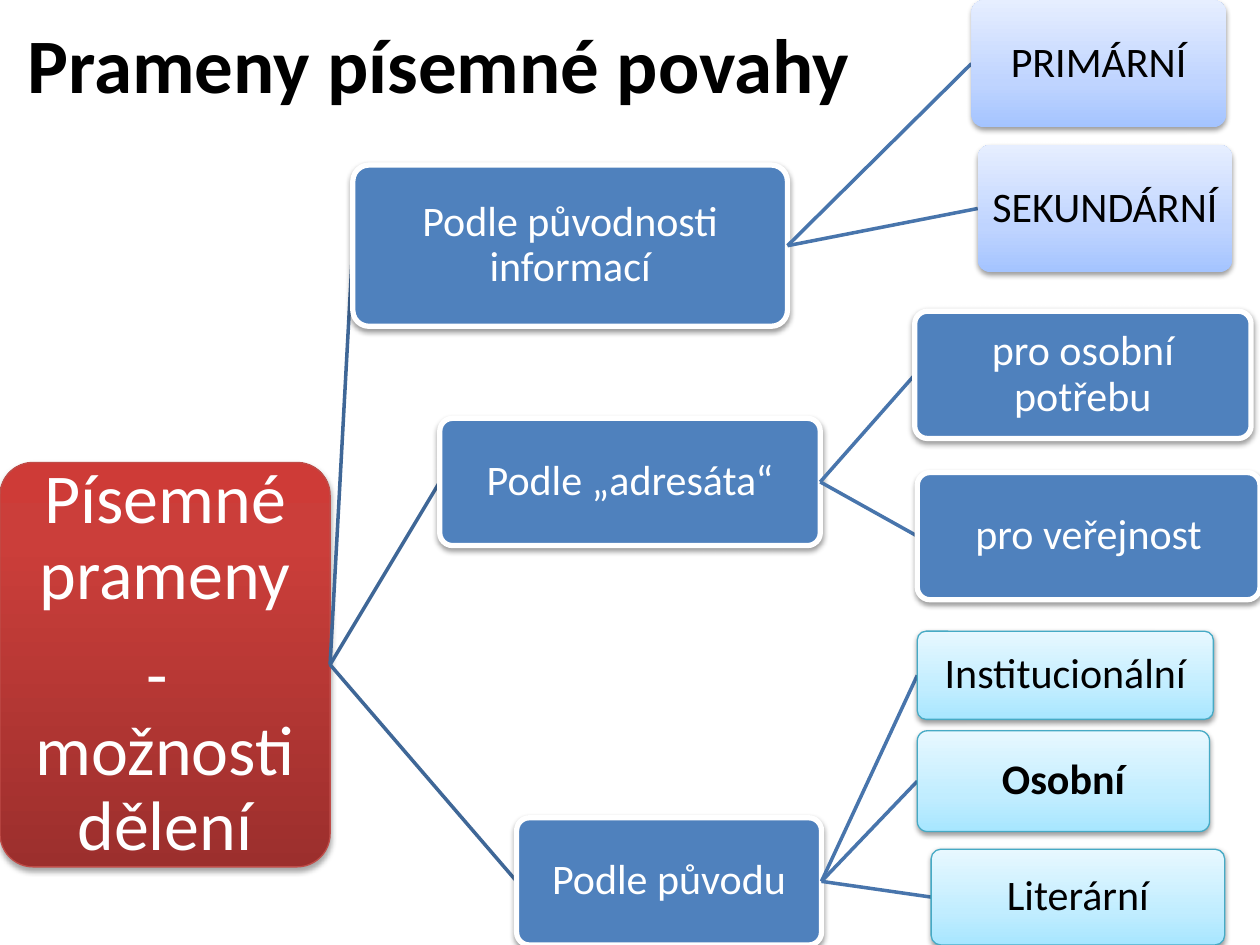
from dataclasses import dataclass

from lxml import etree
from pptx import Presentation
from pptx import util as u
from pptx.dml.color import RGBColor
from pptx.enum import shapes, text
from pptx.oxml.ns import qn

COLUMNS, ROWS = 100, 75
CELL = u.Inches(0.1)


@dataclass(frozen=True)
class Style:
    stops: tuple  # (position in percent, colour), from bottom to top
    ink: str = "000000"
    outline: str = ""
    outline_width: float = 0.75
    size: int = 24
    inset: float = 0.02
    shadow_alpha: int = 38
    shadow_distance: float = 1.6


class Theme:
    font = "Calibri"
    title_size = 44
    title_ink = "000000"
    root_line = "3F6797"
    leaf_line = "4875AC"
    line_width = 2
    corner = 0.1
    line_spacing = 0.9
    space_after = 0.35  # share of the type size
    shadow_blur = 3.1
    root = Style(((0, "9C2F2D"), (80, "CB3E3A"), (100, "CE3B37")), "FFFFFF",
                 "BF4C48", size=40, inset=0.03, shadow_alpha=35, shadow_distance=1.8)
    blue = Style(((0, "4F81BD"),), "FFFFFF", "FFFFFF", 3)
    lavender = Style(((0, "A4C4FF"), (35, "BFD4FF"), (100, "E6EEFF")))
    aqua = Style(((0, "A7E6FF"), (35, "C1EDFF"), (100, "E7F8FF")), outline="46AAC5")


# Each place is left, top, width, height in grid cells.
ROOT = ("Písemné prameny\n-  možnosti dělení", (0, 36.7, 26.2, 32.1))
BRANCHES = [
    ("Podle původnosti informací", (28, 13.1, 34.5, 12.8), Theme.lavender, [
        ("PRIMÁRNÍ", (77.1, 0, 20.2, 10.1)),
        ("SEKUNDÁRNÍ", (77.6, 11.5, 20.2, 10.1))]),
    ("Podle „adresáta“", (34.9, 33.2, 30.2, 10.1), Theme.blue, [
        ("pro osobní potřebu", (72.6, 24.7, 26.7, 10.1)),
        ("pro veřejnost", (72.8, 37.5, 27.2, 10.1))]),
    ("Podle původu", (41, 64.9, 24.2, 10.1), Theme.aqua, [
        ("Institucionální", (72.8, 50.1, 23.5, 7)),
        ("Osobní", (72.8, 58, 23.2, 8)),
        ("Literární", (73.9, 67.4, 23.3, 7.6))]),
]
EMPHASIZED = "Osobní"


def cells(place):
    return [round(length * CELL) for length in place]


def rgb(code):
    return RGBColor.from_string(code)


def add_color(parent, code):
    return etree.SubElement(parent, qn("a:srgbClr"), val=code)


def paint(node, stops):
    if len(stops) == 1:
        node.fill.solid()
        node.fill.fore_color.rgb = rgb(stops[0][1])
        return
    node.fill.gradient()
    node.fill.gradient_angle = 90
    stop_list = node._element.spPr.find(".//" + qn("a:gsLst"))
    for old_stop in list(stop_list):
        stop_list.remove(old_stop)
    for position, code in stops:
        add_color(etree.SubElement(stop_list, qn("a:gs"), pos=str(position * 1000)), code)


def cast_shadow(node, style):
    node.shadow.inherit = False
    effects = node._element.spPr.find(qn("a:effectLst"))
    shadow = etree.SubElement(
        effects, qn("a:outerShdw"), blurRad=str(u.Pt(Theme.shadow_blur)),
        dist=str(u.Pt(style.shadow_distance)), dir="5400000", rotWithShape="0")
    etree.SubElement(add_color(shadow, "000000"), qn("a:alpha"),
                     val=str(style.shadow_alpha * 1000))


def write(frame, words, size, ink, bold=False):
    frame.word_wrap = True
    frame.vertical_anchor = text.MSO_ANCHOR.MIDDLE
    frame.text = words
    for paragraph in frame.paragraphs:
        paragraph.alignment = text.PP_ALIGN.CENTER
        for run in paragraph.runs:
            run.font.name = Theme.font
            run.font.size = u.Pt(size)
            run.font.bold = bold
            run.font.color.rgb = rgb(ink)


def add_node(slide, words, place, style):
    node = slide.shapes.add_shape(shapes.MSO_SHAPE.ROUNDED_RECTANGLE, *cells(place))
    node.adjustments[0] = Theme.corner
    paint(node, style.stops)
    if style.outline:
        node.line.color.rgb = rgb(style.outline)
        node.line.width = u.Pt(style.outline_width)
    else:
        node.line.fill.background()
    cast_shadow(node, style)
    frame = node.text_frame
    frame.margin_left = frame.margin_right = u.Inches(style.inset)
    frame.margin_top = frame.margin_bottom = u.Inches(style.inset)
    write(frame, words, style.size, style.ink, words == EMPHASIZED)
    for paragraph in frame.paragraphs:
        paragraph.line_spacing = Theme.line_spacing
        paragraph.space_after = u.Pt(style.size * Theme.space_after)
    return node


def add_child(slide, parent, words, place, style, line_color):
    """Add a node whose link to its parent lies behind it."""
    link = slide.shapes.add_connector(shapes.MSO_CONNECTOR.STRAIGHT, 0, 0, 0, 0)
    link.line.color.rgb = rgb(line_color)
    link.line.width = u.Pt(Theme.line_width)
    etree.SubElement(link._element.spPr, qn("a:effectLst"))
    child = add_node(slide, words, place, style)
    link.begin_connect(parent, 3)
    link.end_connect(child, 1)
    return child


def add_title(slide, words, place):
    title = slide.shapes.add_textbox(*cells(place))
    write(title.text_frame, words, Theme.title_size, Theme.title_ink, True)


def main():
    deck = Presentation()
    deck.slide_width, deck.slide_height = COLUMNS * CELL, ROWS * CELL
    slide = deck.slides.add_slide(deck.slide_layouts[6])
    add_title(slide, "Prameny písemné povahy", (0, 0, 69.7, 9.9))
    root = add_node(slide, *ROOT, Theme.root)
    for words, place, leaf_style, leaves in BRANCHES:
        branch = add_child(slide, root, words, place, Theme.blue, Theme.root_line)
        for leaf_words, leaf_place in leaves:
            add_child(slide, branch, leaf_words, leaf_place, leaf_style, Theme.leaf_line)
    deck.save("out.pptx")


if __name__ == "__main__":
    main()
